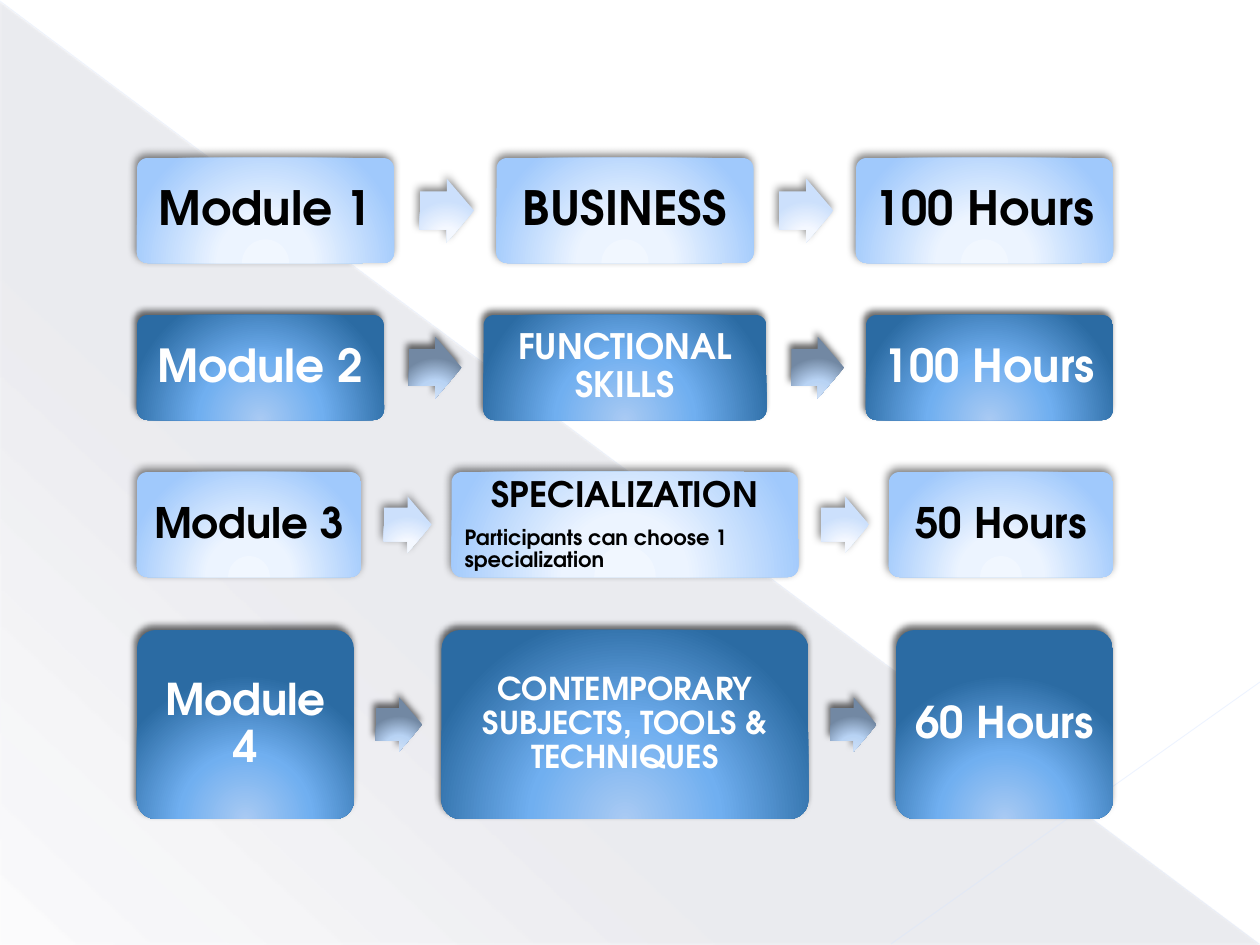
from lxml.etree import SubElement
from pptx import Presentation
from pptx.dml.color import RGBColor
from pptx.enum.shapes import MSO_CONNECTOR, MSO_SHAPE
from pptx.enum.text import MSO_ANCHOR, PP_ALIGN
from pptx.oxml.ns import qn
from pptx.util import Emu, Pt

FONT = "TeX Gyre Adventor"
BLACK = RGBColor(0x00, 0x00, 0x00)
WHITE = RGBColor(0xFF, 0xFF, 0xFF)
NAVY = RGBColor(0x24, 0x28, 0x52)
PALE_LINE = RGBColor(0xD3, 0xE3, 0xFF)
FAINT_LINE = RGBColor(0xD8, 0xE6, 0xFF)


def stops(*pairs):
    return [(pos, RGBColor.from_string(color), 100) for pos, color in pairs]


# Shadows are opacity %, blur pt, distance pt
LIGHT = {
    "box": stops((0, "F1F7FF"), (34, "ECF4FF"), (100, "A0C9FC")),
    "arrow": stops((0, "F7FAFF"), (34, "F4F8FF"), (100, "CCE0FC")),
    "shadow": (50, 5, 2), "text": BLACK,
}
DARK = {
    "box": stops((0, "A9CAF3"), (46, "70AFF0"), (100, "2B6BA3")),
    "arrow": stops((0, "D0E1F7"), (46, "B8D3F4"), (100, "7288A3")),
    "shadow": (60, 4, 3), "text": WHITE,
}

# Each box text is a list of (words, size); widths and heights are in px
MODULES = [
    {"theme": LIGHT, "top": 158, "height": 105, "side": 257, "middle": 257,
     "insets": (14, 14),
     "texts": [[("Module 1", 27)], [("BUSINESS", 27)], [("100 Hours", 27)]]},
    {"theme": DARK, "top": 315, "height": 105, "side": 247, "middle": 283,
     "insets": (14, 10),
     "texts": [[("Module 2", 26)], [("FUNCTIONAL SKILLS", 20)],
               [("100 Hours", 26)]]},
    {"theme": LIGHT, "top": 472, "height": 105, "side": 224, "middle": 347,
     "insets": (13, 10),
     "texts": [[("Module 3", 24)],
               [("SPECIALIZATION", 20),
                ("Participants can choose 1 specialization", 12)],
               [("50 Hours", 24)]]},
    {"theme": DARK, "top": 630, "height": 189, "side": 217, "middle": 367,
     "insets": (13, 9),
     "texts": [[("Module 4", 25)],
               [("CONTEMPORARY SUBJECTS, TOOLS & TECHNIQUES", 18)],
               [("60 Hours", 25)]]},
]


def px(value):
    return Emu(round(value * 914400 / 126))


def add_color(parent, color, opacity):
    node = SubElement(parent, qn("a:srgbClr"), val=str(color))
    if opacity < 100:
        SubElement(node, qn("a:alpha"), val=str(opacity * 1000))


def fill_gradient(shape, gradient, angle=None):
    """Linear at the given angle, or else a glow from below the shape."""
    shape.fill.gradient()
    grad = shape._element.spPr.find(qn("a:gradFill"))
    for child in list(grad):
        grad.remove(child)
    stop_list = SubElement(grad, qn("a:gsLst"))
    for pos, color, opacity in gradient:
        stop = SubElement(stop_list, qn("a:gs"), pos=str(pos * 1000))
        add_color(stop, color, opacity)
    if angle is None:
        glow = SubElement(grad, qn("a:path"), attrib={"path": "circle"})
        SubElement(glow, qn("a:fillToRect"), l="50000", t="155000",
                   r="50000", b="-55000")
    else:
        SubElement(grad, qn("a:lin"), ang=str(angle * 60000), scaled="0")


def add_panel(slide, kind, box, gradient, angle=None, shadow=None):
    shape = slide.shapes.add_shape(kind, *map(px, box))
    shape.shadow.inherit = False
    shape.line.fill.background()
    fill_gradient(shape, gradient, angle)
    if shadow:
        opacity, blur, distance = shadow
        effects = shape._element.spPr.find(qn("a:effectLst"))
        outer = SubElement(effects, qn("a:outerShdw"), blurRad=str(Pt(blur)),
                           dist=str(Pt(distance)), dir=str(245 * 60000),
                           rotWithShape="0")
        add_color(outer, BLACK, opacity)
    return shape


def add_hairline(slide, ends, color, width, opacity):
    hairline = slide.shapes.add_connector(MSO_CONNECTOR.STRAIGHT,
                                          *map(px, ends))
    hairline.line.width = Pt(width)
    hairline.line.color.rgb = color
    SubElement(hairline._element.spPr, qn("a:effectLst"))
    color_node = next(hairline._element.spPr.iter(qn("a:srgbClr")))
    SubElement(color_node, qn("a:alpha"), val=str(opacity * 1000))


def add_backdrop(slide, box):
    left, top, width, height = box
    right, bottom = left + width, top + height
    add_panel(slide, MSO_SHAPE.RIGHT_TRIANGLE,
              (left + 1, top + 3, width - 2, height - 3),
              [(0, NAVY, 10), (70, NAVY, 8), (100, NAVY, 1)], angle=133)
    add_hairline(slide, (left, top + 1, right - 1, bottom - 1),
                 PALE_LINE, 0.39, 35)
    add_hairline(slide, (right, top + 682, left + 891, bottom - 1),
                 FAINT_LINE, 0.47, 45)


def write_text(shape, lines, inset, color):
    frame = shape.text_frame
    settings = {"word_wrap": True, "vertical_anchor": MSO_ANCHOR.MIDDLE}
    settings |= {f"margin_{side}": px(inset)
                 for side in ("left", "top", "right", "bottom")}
    for name, value in settings.items():
        setattr(frame, name, value)
    for index, (words, size) in enumerate(lines):
        paragraph = frame.add_paragraph() if index else frame.paragraphs[0]
        paragraph.alignment = PP_ALIGN.LEFT if index else PP_ALIGN.CENTER
        paragraph.line_spacing = 0.9
        if index < len(lines) - 1:
            paragraph.space_after = Pt(7)
        run = paragraph.add_run()
        run.text = words
        run.font.color.rgb = color
        for name, value in {"name": FONT, "size": Pt(size),
                            "bold": True}.items():
            setattr(run.font, name, value)


def add_module_row(slide, box, module):
    left, top, width, height = box
    theme = module["theme"]
    side, middle = module["side"], module["middle"]
    side_inset, middle_inset = module["insets"]
    gap = (width - 2 * side - middle) / 2
    # Arrows scale with the gap they sit in
    arrow_width, arrow_height = 0.53 * gap, 0.62 * gap
    columns = zip(module["texts"], (side, middle, side),
                  (side_inset, middle_inset, side_inset))
    for index, (lines, box_width, inset) in enumerate(columns):
        if index:
            arrow = add_panel(
                slide, MSO_SHAPE.RIGHT_ARROW,
                (left - 0.75 * gap, top + (height - arrow_height) / 2,
                 arrow_width, arrow_height),
                theme["arrow"], shadow=theme["shadow"])
            arrow.adjustments[0] = 0.6
        step = add_panel(slide, MSO_SHAPE.ROUNDED_RECTANGLE,
                         (left, top, box_width, height),
                         theme["box"], shadow=theme["shadow"])
        step.adjustments[0] = 0.1
        write_text(step, lines, inset, theme["text"])
        left += box_width + gap


def main():
    deck = Presentation()
    deck.slide_width, deck.slide_height = px(1260), px(945)
    slide = deck.slides.add_slide(deck.slide_layouts[6])
    add_backdrop(slide, (0, 0, 1260, 945))
    for module in MODULES:
        add_module_row(slide, (137, module["top"], 976, module["height"]),
                       module)
    deck.save("out.pptx")


if __name__ == "__main__":
    main()
